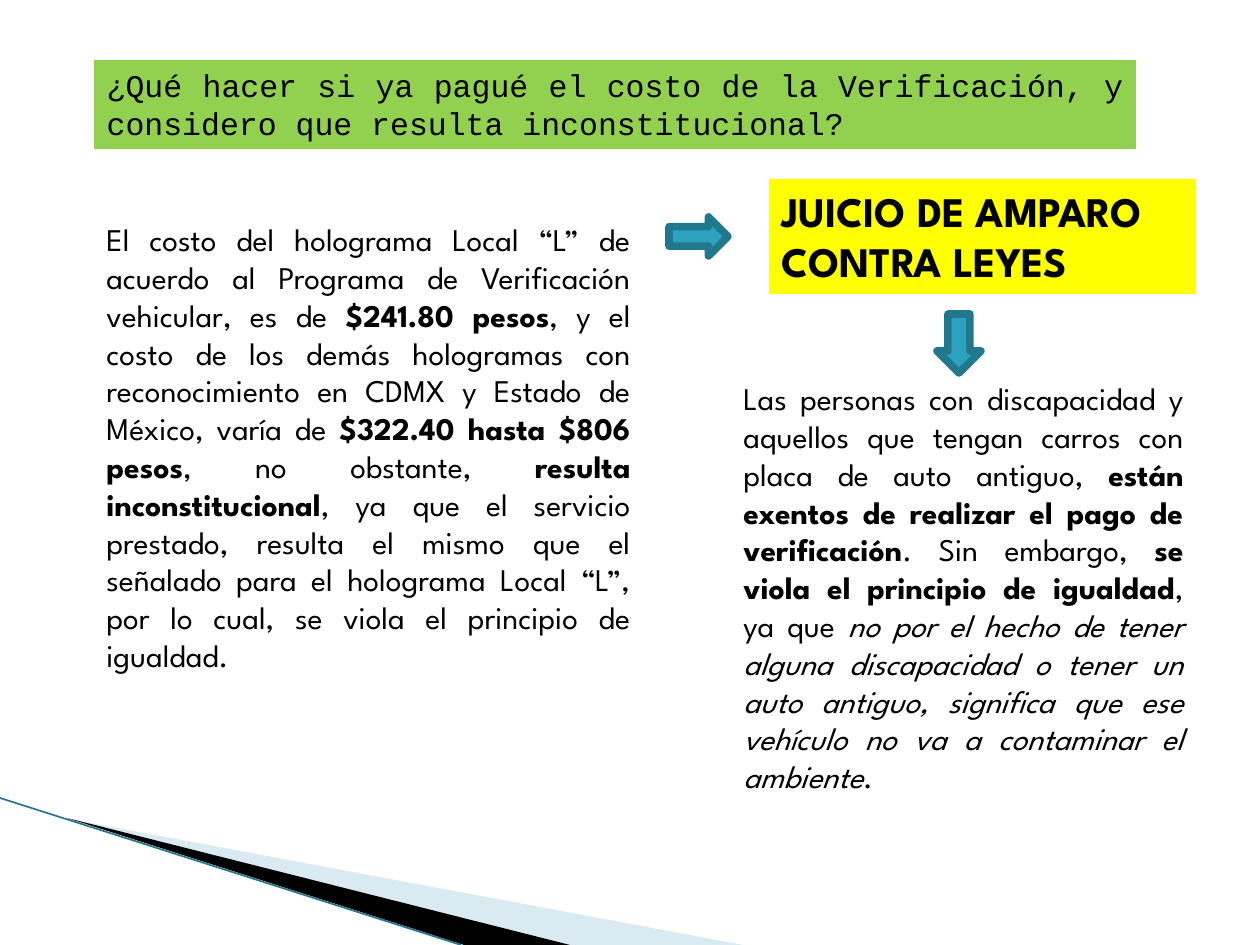
from dataclasses import dataclass

from lxml.etree import SubElement
from pptx import Presentation
from pptx.dml.color import RGBColor
from pptx.enum.shapes import MSO_CONNECTOR, MSO_SHAPE
from pptx.enum.text import MSO_ANCHOR, MSO_AUTO_SIZE, PP_ALIGN
from pptx.oxml.ns import qn
from pptx.util import Pt

PX = 914400 // 126


@dataclass(frozen=True)
class Theme:
    text: str = "000000"
    heading_fill: str = "92D050"
    remedy_fill: str = "FFFF00"
    arrow_fill: str = "2DA2BF"
    arrow_line: str = "21788D"
    pale_wedge: str = "A0CBDC"
    dark_wedge: str = "000000"
    heading_font: str = "Courier New"
    body_font: str = "League Spartan"
    body_size: int = 18
    remedy_size: int = 24


THEME = Theme()

# Each run is (text, style), where style is "", "b" or "i".
HEADING = [("¿Qué hacer si ya pagué el costo de la Verificación, y considero que "
            "resulta inconstitucional?", "")]
REMEDY = [("JUICIO DE AMPARO CONTRA LEYES", "b")]
COST = [
    ("El costo del holograma Local “L” de acuerdo al Programa de Verificación "
     "vehicular, es de ", ""),
    ("$241.80 pesos", "b"),
    (", y el costo de los demás hologramas con reconocimiento en CDMX y Estado "
     "de México, varía de ", ""),
    ("$322.40 hasta $806 pesos", "b"),
    (", no obstante, ", ""),
    ("resulta inconstitucional", "b"),
    (", ya que el servicio prestado, resulta el mismo que el señalado para el "
     "holograma Local “L”, por lo cual, se viola el principio de igualdad.", ""),
]
EXEMPTION = [
    ("Las personas con discapacidad y aquellos que tengan carros con placa de "
     "auto antiguo, ", ""),
    ("están exentos de realizar el pago de verificación", "b"),
    (". Sin embargo, ", ""),
    ("se viola el principio de igualdad", "b"),
    (", ya que ", ""),
    ("no por el hecho de tener alguna discapacidad o tener un auto antiguo, "
     "significa que ese vehículo no va a contaminar el ambiente", "i"),
    (".", ""),
]

# Boxes are (left, top, width, height) in px.
HEADING_BOX = (94, 60, 1042, 89)
REMEDY_BOX = (769, 179, 427, 115)
COLUMNS = [((94, 214, 549, 547), COST), ((731, 373, 465, 547), EXEMPTION)]
ARROWS = [(MSO_SHAPE.RIGHT_ARROW, (669, 217, 59, 39)),
          (MSO_SHAPE.DOWN_ARROW, (937, 314, 44, 59))]
WEDGES = [([(69, 819), (743, 945), (568, 945)], THEME.pale_wedge, 40),
          ([(67, 818), (570, 945), (464, 945)], THEME.dark_wedge, 100)]
EDGE = (0, 798, 461, 945)


def emu(box):
    return [v * PX for v in box]


def paint(sp, color):
    sp.fill.solid()
    sp.fill.fore_color.rgb = RGBColor.from_string(color)


def write(sp, runs, font, size, align):
    tf = sp.text_frame
    tf.word_wrap = True
    tf.auto_size = MSO_AUTO_SIZE.NONE
    tf.vertical_anchor = MSO_ANCHOR.TOP
    p = tf.paragraphs[0]
    p.alignment = align
    for text, style in runs:
        r = p.add_run()
        r.text = text
        r.font.name = font
        r.font.size = Pt(size)
        r.font.bold = style == "b"
        r.font.italic = style == "i"
        r.font.color.rgb = RGBColor.from_string(THEME.text)


def add_wedge(slide, points, color, opacity):
    fb = slide.shapes.build_freeform(*points[0], scale=PX)
    fb.add_line_segments(points[1:], close=True)
    sp = fb.convert_to_shape()
    sp.shadow.inherit = False
    paint(sp, color)
    sp.line.fill.background()
    if opacity < 100:
        clr = sp._element.spPr.find(qn("a:solidFill"))[0]
        SubElement(clr, qn("a:alpha"), val=str(opacity * 1000))


def add_edge(slide):
    line = slide.shapes.add_connector(MSO_CONNECTOR.STRAIGHT, *emu(EDGE))
    line.line.color.rgb = RGBColor.from_string(THEME.arrow_line)
    line.line.width = Pt(0.95)
    SubElement(line._element.spPr, qn("a:effectLst"))


def add_arrow(slide, kind, box):
    sp = slide.shapes.add_shape(kind, *emu(box))
    sp.shadow.inherit = False
    paint(sp, THEME.arrow_fill)
    sp.line.color.rgb = RGBColor.from_string(THEME.arrow_line)
    sp.line.width = Pt(4.33)
    SubElement(sp.line._get_or_add_ln(), qn("a:round"))


def main():
    prs = Presentation()
    prs.slide_width, prs.slide_height = emu((1260, 945))
    slide = prs.slides.add_slide(prs.slide_layouts[5])

    for points, color, opacity in WEDGES:
        add_wedge(slide, points, color, opacity)
    add_edge(slide)

    title = slide.shapes.title
    title.left, title.top, title.width, title.height = emu(HEADING_BOX)
    paint(title, THEME.heading_fill)
    write(title, HEADING, THEME.heading_font, THEME.body_size, PP_ALIGN.JUSTIFY)

    remedy = slide.shapes.add_shape(MSO_SHAPE.RECTANGLE, *emu(REMEDY_BOX))
    remedy.shadow.inherit = False
    paint(remedy, THEME.remedy_fill)
    remedy.line.fill.background()
    write(remedy, REMEDY, THEME.body_font, THEME.remedy_size, PP_ALIGN.LEFT)

    for box, runs in COLUMNS:
        column = slide.shapes.add_textbox(*emu(box))
        write(column, runs, THEME.body_font, THEME.body_size, PP_ALIGN.JUSTIFY)
    for kind, box in ARROWS:
        add_arrow(slide, kind, box)

    prs.save("out.pptx")


if __name__ == "__main__":
    main()
